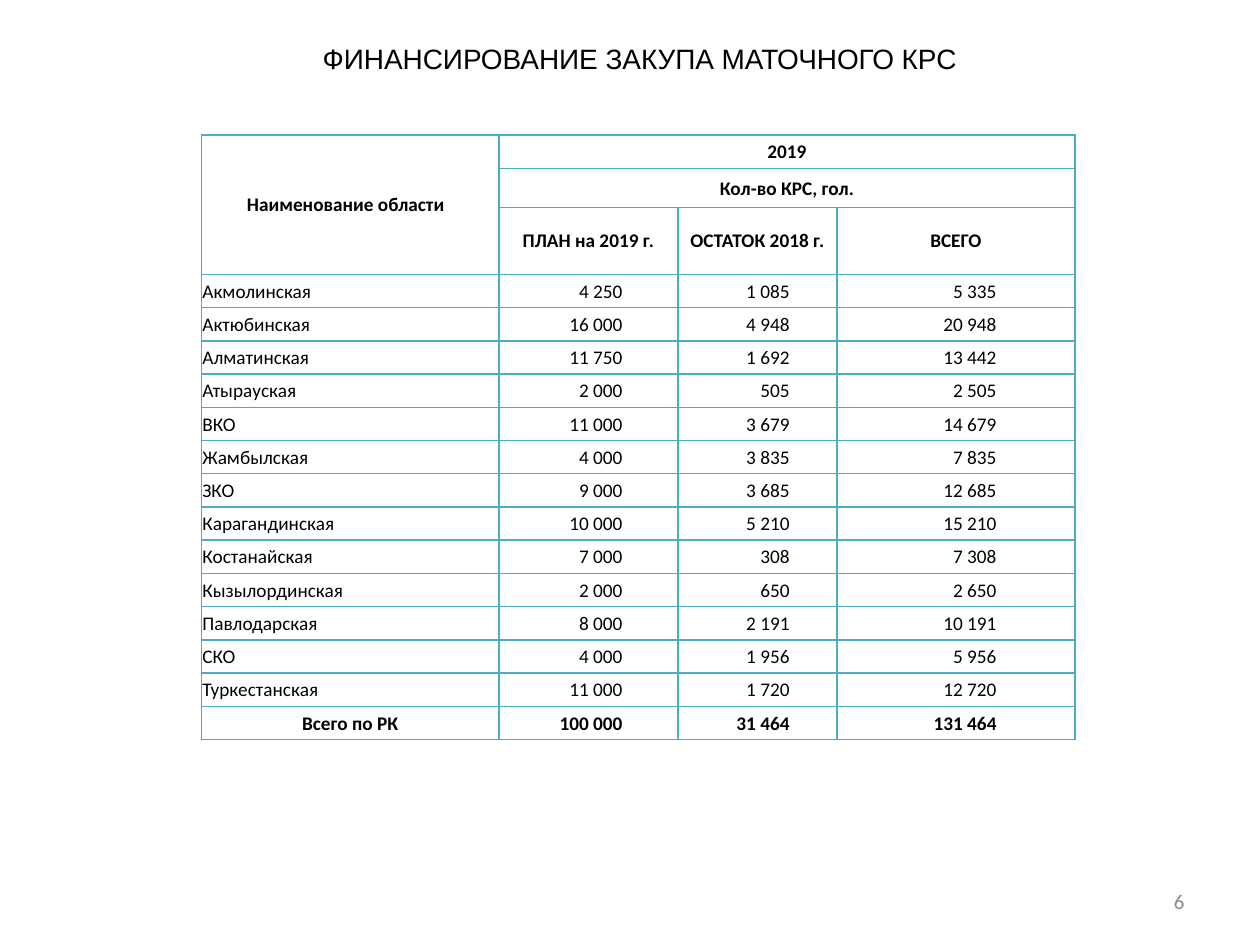
from lxml.etree import SubElement as Sub
from pptx import Presentation
from pptx.dml.color import RGBColor as Rgb
from pptx.enum.text import MSO_ANCHOR as Anchor, PP_ALIGN as Align
from pptx.oxml.ns import qn
from pptx.util import Cm, Pt

TITLE = "ФИНАНСИРОВАНИЕ ЗАКУПА МАТОЧНОГО КРС"
PAGE = "6"
HEADS = [
    (0, 0, 2, 0, "Наименование области"),
    (0, 1, 0, 3, "2019"),
    (1, 1, 1, 3, "Кол-во КРС, гол."),
    (2, 1, 2, 1, "ПЛАН на 2019 г."),
    (2, 2, 2, 2, "ОСТАТОК 2018 г."),
    (2, 3, 2, 3, "ВСЕГО"),
]
ROWS = [
    ("Акмолинская", "4 250", "1 085", "5 335"),
    ("Актюбинская", "16 000", "4 948", "20 948"),
    ("Алматинская", "11 750", "1 692", "13 442"),
    ("Атырауская", "2 000", "505", "2 505"),
    ("ВКО", "11 000", "3 679", "14 679"),
    ("Жамбылская", "4 000", "3 835", "7 835"),
    ("ЗКО", "9 000", "3 685", "12 685"),
    ("Карагандинская", "10 000", "5 210", "15 210"),
    ("Костанайская", "7 000", "308", "7 308"),
    ("Кызылординская", "2 000", "650", "2 650"),
    ("Павлодарская", "8 000", "2 191", "10 191"),
    ("СКО", "4 000", "1 956", "5 956"),
    ("Туркестанская", "11 000", "1 720", "12 720"),
    ("Всего по РК", "100 000", "31 464", "131 464"),
]
WIDTHS = [6, 3.61, 3.2, 4.8]
TALLS = [0.68, 0.78, 1.35] + [0.67] * len(ROWS)
PADS = [0.02, 1.12, 0.95, 1.58]
TEAL, BLACK, GREY = "4BACC6", "000000", "8C8C8C"


def color(hue):
    return Rgb.from_string(hue)


def write(frame, text, size, side, hue=BLACK, face="Calibri", bold=False):
    para = frame.paragraphs[0]
    para.alignment = side
    run = para.add_run()
    run.text = text
    run.font.size = Pt(size)
    run.font.name = face
    run.font.bold = bold
    run.font.color.rgb = color(hue)
    return para


def add_box(slide, left, top, width, height):
    frame = slide.shapes.add_textbox(Cm(left), Cm(top), Cm(width), Cm(height)).text_frame
    frame.word_wrap = True
    frame.vertical_anchor = Anchor.MIDDLE
    return frame


def dress(cell):
    cell.margin_left = cell.margin_right = cell.margin_top = Cm(0.02)
    cell.margin_bottom = 0
    cell.vertical_anchor = Anchor.MIDDLE
    props = cell._tc.get_or_add_tcPr()
    for edge in ("lnL", "lnR", "lnT", "lnB"):
        line = Sub(props, qn(f"a:{edge}"), w=str(Pt(1)))
        Sub(Sub(line, qn("a:solidFill")), qn("a:srgbClr"), val=TEAL)
    cell.fill.background()


def add_grid(slide):
    grid = slide.shapes.add_table(
        len(TALLS), len(WIDTHS), Cm(4.06), Cm(2.72), Cm(sum(WIDTHS)), Cm(sum(TALLS))
    ).table
    grid.first_row = grid.horz_banding = False
    for col, width in zip(grid.columns, WIDTHS):
        col.width = Cm(width)
    for row, tall in zip(grid.rows, TALLS):
        row.height = Cm(tall)
    for cell in grid.iter_cells():
        dress(cell)
    for top, left, low, right, text in HEADS:
        cell = grid.cell(top, left)
        if (top, left) != (low, right):
            cell.merge(grid.cell(low, right))
        write(cell.text_frame, text, 11, Align.CENTER, bold=True)
    grid.cell(0, 0).margin_right = Cm(0.2)
    for r, row in enumerate(ROWS, len(TALLS) - len(ROWS)):
        total = row is ROWS[-1]
        for c, text in enumerate(row):
            cell = grid.cell(r, c)
            cell.margin_right = Cm(PADS[c])
            label = Align.CENTER if total else Align.LEFT
            write(cell.text_frame, text, 11, Align.RIGHT if c else label, bold=total)


def main():
    deck = Presentation()
    deck.slide_width, deck.slide_height = Cm(25.4), Cm(19.05)
    slide = deck.slides.add_slide(deck.slide_layouts[6])
    write(add_box(slide, 18.2, 17.66, 5.93, 1.01), PAGE, 12, Align.RIGHT, GREY)
    head = add_box(slide, 0.8, 0.33, 24.2, 1.78)
    head.margin_left = head.margin_right = Cm(0.2)
    head.margin_top = head.margin_bottom = Cm(0.1)
    write(head, TITLE, 16, Align.CENTER, face="Arial").line_spacing = 0.9
    add_grid(slide)
    deck.save("out.pptx")


if __name__ == "__main__":
    main()
